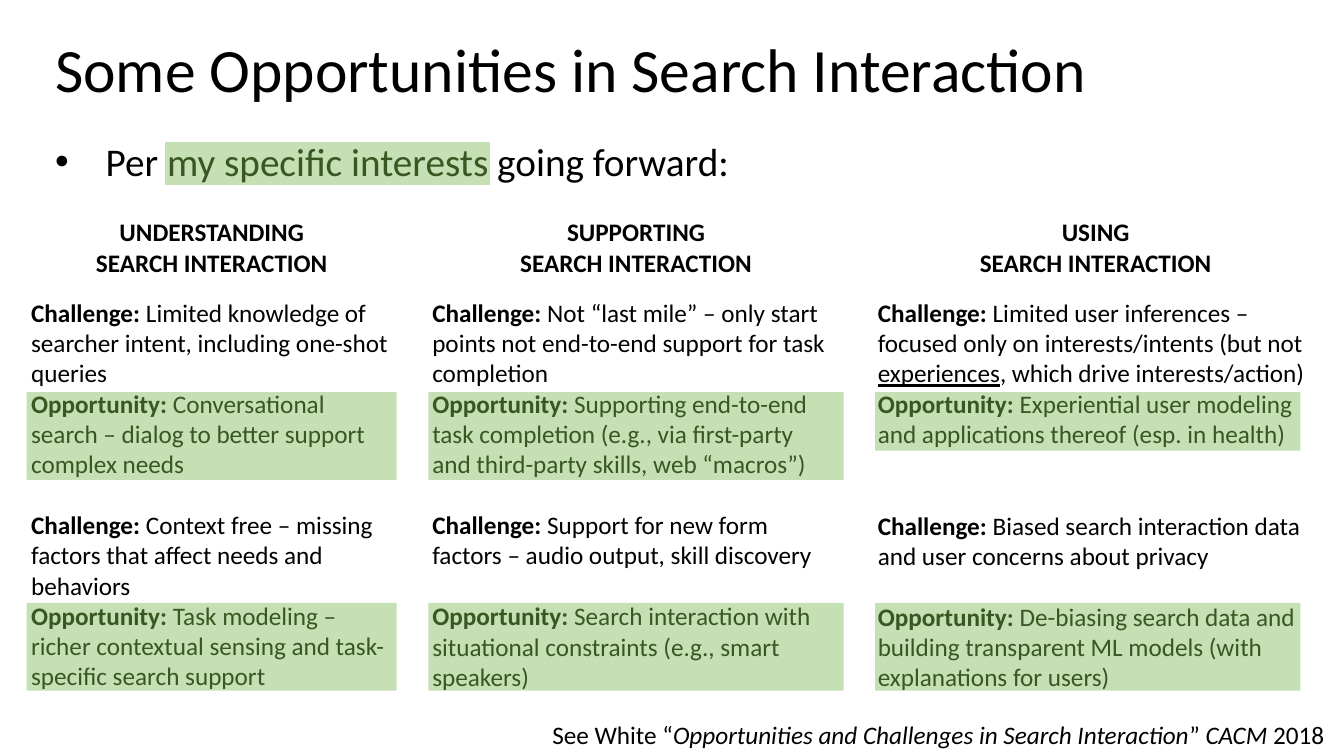
from lxml import etree
from pptx import Presentation
from pptx.dml.color import RGBColor
from pptx.enum.shapes import MSO_SHAPE
from pptx.enum.text import MSO_ANCHOR, PP_ALIGN
from pptx.oxml.ns import qn
from pptx.util import Pt

RECTANGLE = MSO_SHAPE.RECTANGLE
CENTER, MIDDLE = PP_ALIGN.CENTER, MSO_ANCHOR.MIDDLE
BLACK, DARK_GREEN, LIGHT_GREEN = "000000", "385723", "C5E0B4"
FONT, BODY_SIZE = "Calibri", 18
BODY_LINE = 21.97  # height of one 18 pt line

# Content: a span is (text, format values)
ITALIC, GREEN = {"italic": True}, {"color": DARK_GREEN}
TITLE = [("Some Opportunities in Search Interaction", {})]
INTRO = [("Per ", {}), ("my specific interests", GREEN), (" going forward:", {})]
SOURCE = [
    ("See White “", {}),
    ("Opportunities and Challenges in Search Interaction", ITALIC),
    ("” ", {}), ("CACM", ITALIC), (" 2018", {}),
]
# Each entry: (label, spans, empty lines above)
COLUMNS = [
    {"heading": "UNDERSTANDING", "center": 151.2, "text": (15.1, 272.2),
     "band": (19.1, 264.2), "band_lines": (3, 3),
     "entries": [
         ("Challenge: ", [("Limited knowledge of searcher intent, including one-shot queries", {})], 0),
         ("Opportunity: ", [("Conversational search – dialog to better support complex needs", {})], 0),
         ("Challenge: ", [("Context free – missing factors that affect needs and behaviors", {})], 1),
         ("Opportunity: ", [("Task modeling – richer contextual sensing and task-specific search support", {})], 0),
     ]},
    {"heading": "SUPPORTING", "center": 454.3, "text": (301.7, 303.8),
     "band": (306, 296.6), "band_lines": (3, 3),
     "entries": [
         ("Challenge: ", [("Not “last mile” – only start points not end-to-end support for task completion", {})], 0),
         ("Opportunity: ", [("Supporting end-to-end task completion (e.g., via first-party and third-party skills, web “macros”)", {})], 0),
         ("Challenge: ", [("Support for new form factors – audio output, skill discovery", {})], 1),
         ("Opportunity: ", [("Search interaction with situational constraints (e.g., smart speakers)", {})], 1),
     ]},
    {"heading": "USING", "center": 782.6, "text": (619.9, 324.7),
     "band": (625, 303.8), "band_lines": (2, 3),
     "entries": [
         ("Challenge: ", [("Limited user inferences – focused only on interests/intents (but not ", {}),
                          ("experiences", {"underline": True}),
                          (", which drive interests/action)", {})], 0),
         ("Opportunity: ", [("Experiential user modeling and applications thereof (esp. in health)", {})], 0),
         ("Challenge: ", [("Biased search interaction data and user concerns about privacy", {})], 2),
         ("Opportunity: ", [("De-biasing search data and building transparent ML models (with explanations for users)", {})], 1),
     ]},
]
HEADING_SECOND_LINE = "SEARCH INTERACTION"
HEADING_TOP, HEADING_WIDTH, HEADING_HEIGHT = 151.2, 190, 51.1
BODY_TOP, BODY_HEIGHT = 208.8, 300
BAND_TOPS, BAND_LINE = (280.1, 430.6), 20.9

deck = Presentation()
deck.slide_width, deck.slide_height = Pt(960), Pt(540)
page = deck.slides.add_slide(deck.slide_layouts[6])


def rgb(value):
    return RGBColor.from_string(value)


def add_band(left, top, width, height, outlined=False):
    band = page.shapes.add_shape(RECTANGLE, Pt(left), Pt(top), Pt(width), Pt(height))
    band.shadow.inherit = False
    band.fill.solid()
    band.fill.fore_color.rgb = rgb(LIGHT_GREEN)
    if outlined:
        band.line.color.rgb = rgb(LIGHT_GREEN)
        band.line.width = Pt(1)
    else:
        band.line.fill.background()


def add_text(left, top, width, height, paragraphs, size=BODY_SIZE, anchor=None, bullet=False):
    """Each paragraph is (spans, paragraph format values)."""
    box = page.shapes.add_textbox(Pt(left), Pt(top), Pt(width), Pt(height))
    frame = box.text_frame
    frame.word_wrap = True
    if anchor is not None:
        frame.vertical_anchor = anchor
    for index, (spans, layout) in enumerate(paragraphs):
        para = frame.add_paragraph() if index else frame.paragraphs[0]
        for name, value in layout.items():
            setattr(para, name, value)
        if bullet:
            properties = para._p.get_or_add_pPr()
            properties.set("marL", str(Pt(36)))
            properties.set("indent", str(-Pt(36)))
            etree.SubElement(properties, qn("a:buFont")).set("typeface", "Arial")
            etree.SubElement(properties, qn("a:buChar")).set("char", "•")
        for text, style in spans:
            span = para.add_run()
            span.text = text
            values = {"name": FONT, "size": Pt(size), "color": BLACK, **style}
            span.font.color.rgb = rgb(values.pop("color"))
            for name, value in values.items():
                setattr(span.font, name, value)


# Title and introduction
add_text(32.4, -0.7, 828, 104.4, [(TITLE, {"line_spacing": 0.9})], size=44, anchor=MIDDLE)
add_band(118.1, 102.2, 231.8, 29.5, outlined=True)
add_text(32.4, 94.3, 501.1, 41, [(INTRO, {})], size=28, bullet=True)

# Three columns: green bands, heading, challenges and opportunities
for column in COLUMNS:
    band_left, band_width = column["band"]
    for band_top, lines in zip(BAND_TOPS, column["band_lines"]):
        add_band(band_left, band_top, band_width, lines * BAND_LINE)

    heading = [([(line, {"bold": True})], {"alignment": CENTER})
               for line in (column["heading"], HEADING_SECOND_LINE)]
    add_text(column["center"] - HEADING_WIDTH / 2, HEADING_TOP,
             HEADING_WIDTH, HEADING_HEIGHT, heading)

    body = []
    for label, spans, gap in column["entries"]:
        color = DARK_GREEN if label.startswith("Opportunity") else BLACK
        styled = [(label, {"bold": True, "color": color})]
        styled += [(text, {"color": color, **style}) for text, style in spans]
        body.append((styled, {"space_before": Pt(gap * BODY_LINE)} if gap else {}))
    text_left, text_width = column["text"]
    add_text(text_left, BODY_TOP, text_width, BODY_HEIGHT, body)

# Source line
add_text(387.4, 510.5, 578.9, 28.8, [(SOURCE, {})])

deck.save("out.pptx")
